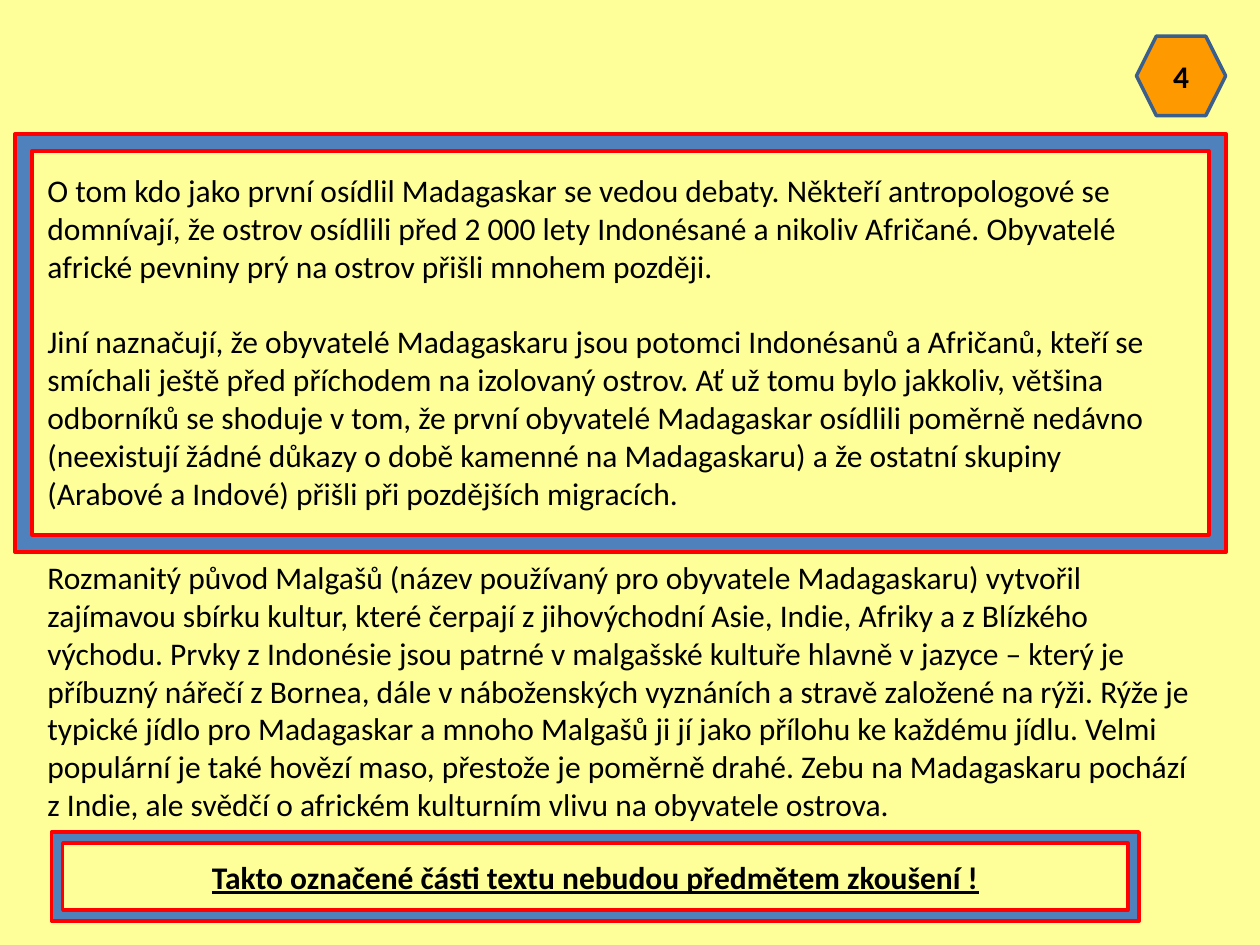
from pptx import Presentation
from pptx.dml.color import RGBColor
from pptx.enum.shapes import MSO_SHAPE
from pptx.enum.text import MSO_ANCHOR, PP_ALIGN
from pptx.util import Pt

CREAM = RGBColor(0xFF, 0xFF, 0x99)
ORANGE = RGBColor(0xFF, 0x99, 0x00)
NAVY = RGBColor(0x3A, 0x5F, 0x8C)
BLUE = RGBColor(0x4F, 0x81, 0xBD)
RED = RGBColor(0xFF, 0x00, 0x00)
BLACK = RGBColor(0x00, 0x00, 0x00)

LINE_GAP = Pt(21.6)

SETTLEMENT = [
    "O tom kdo jako první osídlil Madagaskar se vedou debaty. Někteří antropologové se "
    "domnívají, že ostrov osídlili před 2 000 lety Indonésané a nikoliv Afričané. Obyvatelé "
    "africké pevniny prý na ostrov přišli mnohem později.",
    "Jiní naznačují, že obyvatelé Madagaskaru jsou potomci Indonésanů a Afričanů, kteří se "
    "smíchali ještě před příchodem na izolovaný ostrov. Ať už tomu bylo jakkoliv, většina "
    "odborníků se shoduje v tom, že první obyvatelé Madagaskar osídlili poměrně nedávno "
    "(neexistují žádné důkazy o době kamenné na Madagaskaru) a že ostatní skupiny "
    "(Arabové a Indové) přišli při pozdějších migracích.",
]
CULTURE = [
    "Rozmanitý původ Malgašů (název používaný pro obyvatele Madagaskaru) vytvořil "
    "zajímavou sbírku kultur, které čerpají z jihovýchodní Asie, Indie, Afriky a z Blízkého "
    "východu. Prvky z Indonésie jsou patrné v malgašské kultuře hlavně v jazyce – který je "
    "příbuzný nářečí z Bornea, dále v náboženských vyznáních a stravě založené na rýži. Rýže je "
    "typické jídlo pro Madagaskar a mnoho Malgašů ji jí jako přílohu ke každému jídlu. Velmi "
    "populární je také hovězí maso, přestože je poměrně drahé. Zebu na Madagaskaru pochází "
    "z Indie, ale svědčí o africkém kulturním vlivu na obyvatele ostrova.",
]
NOTICE = "Takto označené části textu nebudou předmětem zkoušení !"


def add_span(para, text, bold=None, underline=None):
    span = para.add_run()
    span.text = text
    span.font.name = "Calibri"
    span.font.size = Pt(18)
    span.font.color.rgb = BLACK
    span.font.bold = bold
    span.font.underline = underline


def add_text(page, left, top, width, height, texts):
    box = page.shapes.add_textbox(Pt(left), Pt(top), Pt(width), Pt(height))
    frame = box.text_frame
    frame.word_wrap = True
    for index, text in enumerate(texts):
        para = frame.add_paragraph() if index else frame.paragraphs[0]
        if index:
            para.space_before = LINE_GAP
        add_span(para, text)


def add_outlined(page, kind, left, top, width, height, fill, line):
    shape = page.shapes.add_shape(kind, Pt(left), Pt(top), Pt(width), Pt(height))
    shape.shadow.inherit = False
    shape.fill.solid()
    shape.fill.fore_color.rgb = fill
    shape.line.color.rgb = line
    shape.line.width = Pt(2)
    return shape


def add_label(shape, text, underline=None):
    shape.text_frame.vertical_anchor = MSO_ANCHOR.MIDDLE
    para = shape.text_frame.paragraphs[0]
    para.alignment = PP_ALIGN.CENTER
    add_span(para, text, bold=True, underline=underline)


def main():
    deck = Presentation()
    deck.slide_width, deck.slide_height = Pt(720), Pt(540)
    page = deck.slides.add_slide(deck.slide_layouts[6])
    page.background.fill.solid()
    page.background.fill.fore_color.rgb = CREAM

    number = add_outlined(page, MSO_SHAPE.HEXAGON, 649.4, 20.7, 51, 45.4, ORANGE, NAVY)
    add_label(number, "4")

    add_text(page, 20, 94.3, 663, 203.8, SETTLEMENT)
    add_text(page, 20, 315.4, 674.6, 160, CULTURE)

    border = add_outlined(page, MSO_SHAPE.FRAME, 8.6, 76.5, 692, 239, BLUE, RED)
    border.adjustments[0] = 0.041

    notice = add_outlined(page, MSO_SHAPE.FRAME, 29.5, 475.4, 621.4, 51, BLUE, RED)
    add_label(notice, NOTICE, underline=True)

    deck.save("out.pptx")


if __name__ == "__main__":
    main()
